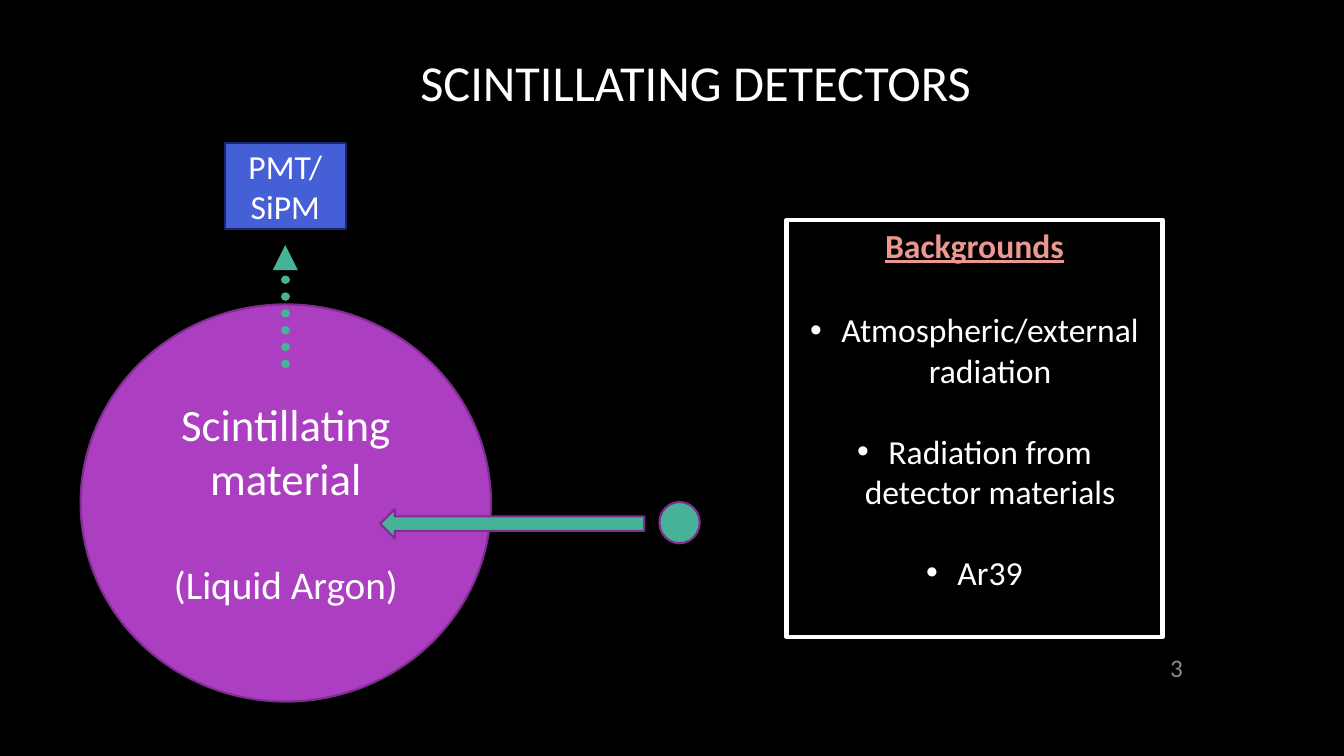
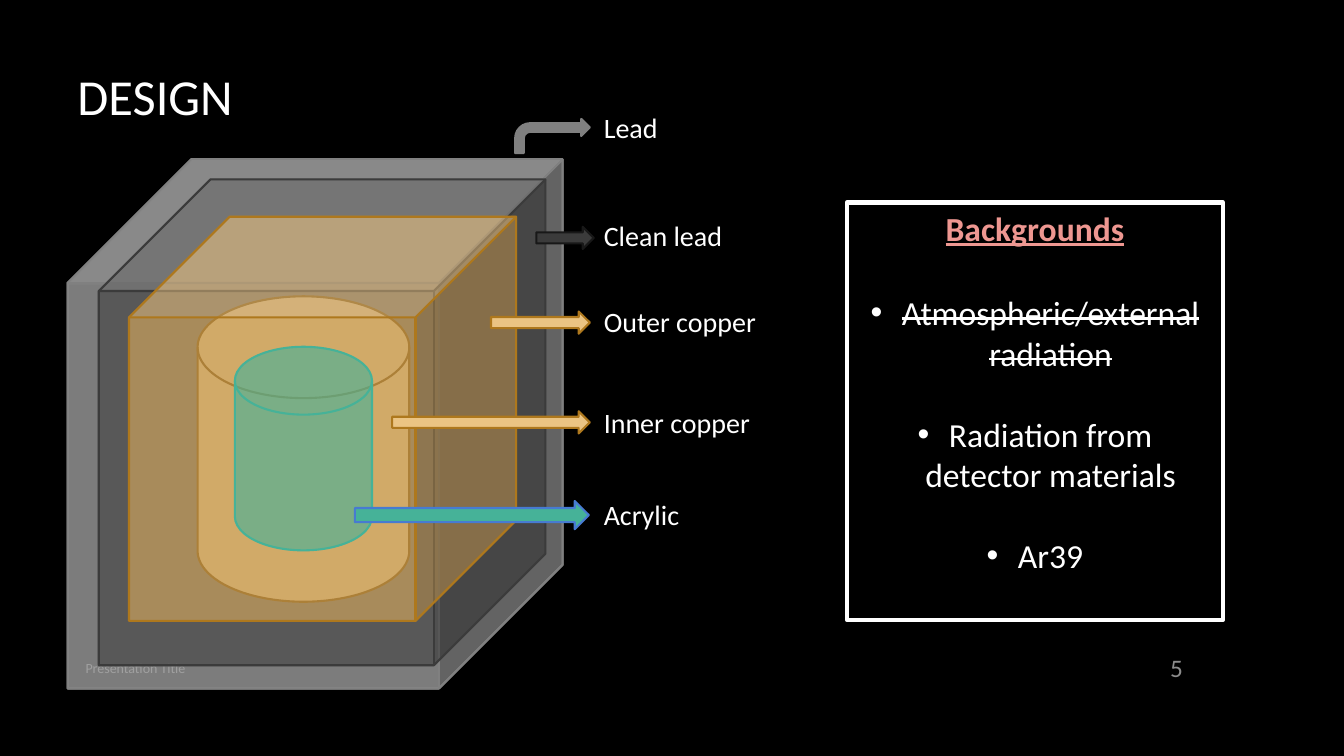
from lxml import etree
from pptx import Presentation
from pptx.dml.color import RGBColor
from pptx.enum.dml import MSO_LINE
from pptx.enum.shapes import MSO_CONNECTOR, MSO_SHAPE
from pptx.enum.text import MSO_ANCHOR, PP_ALIGN
from pptx.oxml.ns import qn
from pptx.util import Inches, Pt

RECT, CUBE = MSO_SHAPE.RECTANGLE, MSO_SHAPE.CUBE
DISC, DRUM = MSO_SHAPE.FLOWCHART_CONNECTOR, MSO_SHAPE.FLOWCHART_MAGNETIC_DISK
RIGHT, LEFT, BENT = MSO_SHAPE.RIGHT_ARROW, MSO_SHAPE.LEFT_ARROW, MSO_SHAPE.BENT_ARROW
TOP, MID = MSO_ANCHOR.TOP, MSO_ANCHOR.MIDDLE
START, CENTER, END = PP_ALIGN.LEFT, PP_ALIGN.CENTER, PP_ALIGN.RIGHT

BLACK = RGBColor(0x00, 0x00, 0x00)
WHITE = RGBColor(0xFF, 0xFF, 0xFF)
MUTED = RGBColor(0x8C, 0x8C, 0x8C)
PINK = RGBColor(0xEE, 0x97, 0x91)
PURPLE = RGBColor(0xAC, 0x3E, 0xC1)
PLUM = RGBColor(0x7F, 0x2E, 0x8F)
BLUE = RGBColor(0x45, 0x5F, 0xD6)
NAVY = RGBColor(0x18, 0x27, 0x6C)
SKY = RGBColor(0x47, 0x7B, 0xD1)
TEAL = RGBColor(0x46, 0xB2, 0x98)
SILVER = RGBColor(0xA6, 0xA6, 0xA6)
GRAY = RGBColor(0x80, 0x80, 0x80)
COAL = RGBColor(0x3B, 0x3B, 0x3B)
INK = RGBColor(0x18, 0x18, 0x18)
SAND = RGBColor(0xEB, 0xC4, 0x83)
GOLD = RGBColor(0xE5, 0xB1, 0x5D)
OCHRE = RGBColor(0xAE, 0x78, 0x1D)
BROWN = RGBColor(0x74, 0x50, 0x13)

FONT = "Calibri"
TITLE = {"size": Pt(36)}
HEAD = {"size": Pt(24), "bold": True, "underline": True}
BODY = {"size": Pt(24)}
INDENT = Inches(0.31)
LABEL_X, LABEL_H = 5.89, 0.44

SOURCES = ["Atmospheric/external radiation", "Radiation from detector materials", "Ar39"]

# kind, box, fill, line
SETUP = [
    (DISC, (0.8, 3.02, 4.07, 3.94), PURPLE, PLUM),
    (DISC, (6.54, 4.98, 0.4, 0.41), TEAL, PLUM),
    (LEFT, (3.77, 5.05, 2.62, 0.29), TEAL, PLUM),
]
CAPTIONS = [
    ("Scintillating material", (1.59, 3.89, 2.49, 1.18), 32),
    ("(Liquid Argon)", (1.59, 5.51, 2.49, 0.57), 28),
]

# kind, box, fill, line, opacity in percent, depth of a cube
LAYERS = [
    (CUBE, (0.67, 1.58, 4.91, 5.25), SILVER, GRAY, 50, 0.25),
    (CUBE, (0.98, 1.78, 4.43, 4.82), COAL, COAL, 50, 0.25),
    (DRUM, (1.96, 2.94, 2.1, 3.03), SAND, BROWN, 61, None),
    (CUBE, (1.28, 2.15, 3.84, 4.01), GOLD, OCHRE, 50, 0.26),
    (DRUM, (2.33, 3.44, 1.36, 2.02), TEAL, TEAL, 61, None),
]
PASSES = 2  # the layers are stacked twice for deeper colour

# label, its top, arrow kind, arrow box, fill, line
PARTS = [
    ("Lead", 1.05, BENT, (5.11, 1.18, 0.74, 0.34), GRAY, GRAY),
    ("Clean lead", 2.12, RIGHT, (5.32, 2.25, 0.57, 0.22), COAL, INK),
    ("Outer copper", 2.97, RIGHT, (4.87, 3.09, 0.98, 0.22), SAND, OCHRE),
    ("Inner copper", 3.97, RIGHT, (3.89, 4.08, 1.96, 0.22), SAND, OCHRE),
    ("Acrylic", 4.89, RIGHT, (3.52, 4.97, 2.32, 0.28), TEAL, SKY),
]


def style(font, look, color):
    for key, value in {"name": FONT, **look}.items():
        setattr(font, key, value)
    font.color.rgb = color


def write(shape, lines, look, color=WHITE, align=START, anchor=TOP):
    frame = shape.text_frame
    frame.word_wrap = True
    frame.vertical_anchor = anchor
    for i, line in enumerate(lines):
        para = frame.paragraphs[0] if i == 0 else frame.add_paragraph()
        para.alignment = align
        run = para.add_run()
        run.text = line
        style(run.font, look, color)
    return frame


def add_text(slide, box, lines, look, *args, **opts):
    shape = slide.shapes.add_textbox(*map(Inches, box))
    return write(shape, lines, look, *args, **opts)


def add_form(slide, kind, box, fill, line, alpha=100, depth=None, width=1.5):
    shape = slide.shapes.add_shape(kind, *map(Inches, box))
    shape.shadow.inherit = False
    if fill is None:
        shape.fill.background()
    else:
        shape.fill.solid()
        shape.fill.fore_color.rgb = fill
    if alpha < 100:
        tint = shape.fill._xPr.find(".//" + qn("a:srgbClr"))
        etree.SubElement(tint, qn("a:alpha"), val=str(alpha * 1000))
    if depth is not None:
        shape.adjustments[0] = depth
    shape.line.color.rgb = line
    shape.line.width = Pt(width)
    return shape


def add_panel(slide, left, top, struck=()):
    """Framed list of backgrounds; the indexes in struck are crossed out."""
    frame = add_form(slide, RECT, (left, top, 3.73, 4.14), None, WHITE, width=3)
    write(frame, ["Backgrounds"], HEAD, PINK, CENTER)
    body = add_text(slide, (left, top + 0.84, 3.73, 2.93), SOURCES, BODY, align=CENTER)
    for i, para in enumerate(body.paragraphs):
        if i:
            para.space_before = Pt(29)
        props = para._p.get_or_add_pPr()
        props.set("marL", str(INDENT))
        props.set("indent", str(-INDENT))
        etree.SubElement(props, qn("a:buFont"), typeface="Arial")
        etree.SubElement(props, qn("a:buChar"), char="•")
        if i in struck:
            para.runs[0]._r.get_or_add_rPr().set("strike", "sngStrike")


def add_ray(slide, start, end):
    """Dotted light ray with an arrowhead."""
    ray = slide.shapes.add_connector(MSO_CONNECTOR.STRAIGHT, *map(Inches, start + end))
    ray.line.color.rgb = TEAL
    ray.line.width = Pt(6)
    ray.line.dash_style = MSO_LINE.ROUND_DOT
    stroke = ray.line._get_or_add_ln()
    stroke.set("cap", "rnd")
    etree.SubElement(stroke, qn("a:tailEnd"), type="triangle")
    etree.SubElement(ray._element.spPr, qn("a:effectLst"))


def new_slide(deck, number):
    slide = deck.slides.add_slide(deck.slide_layouts[6])
    add_text(slide, (11.23, 6.42, 0.6, 0.41), [str(number)], {"size": Pt(18)},
             MUTED, END, MID)
    return slide


def add_setup(deck):
    slide = new_slide(deck, 3)
    for form in SETUP:
        add_form(slide, *form)
    sensor = add_form(slide, RECT, (2.23, 1.42, 1.2, 0.85), BLUE, NAVY)
    write(sensor, ["PMT/", "SiPM"], BODY, align=CENTER, anchor=MID)
    add_ray(slide, (2.83, 3.61), (2.83, 2.43))
    for text, box, size in CAPTIONS:
        add_text(slide, box, [text], {"size": Pt(size)}, align=CENTER)
    add_text(slide, (4.07, 0.46, 5.76, 0.71), ["SCINTILLATING DETECTORS"], TITLE)
    add_panel(slide, 7.8, 2.18)


def add_design(deck):
    slide = new_slide(deck, 5)
    add_text(slide, (0.67, 0.15, 11.08, 1.59), ["DESIGN"], TITLE, anchor=MID)
    add_text(slide, (0.75, 6.42, 8.56, 0.41), ["Presentation Title"],
             {"size": Pt(10)}, MUTED, anchor=MID)
    add_panel(slide, 8.4, 2.01, struck=(0,))
    for layer in LAYERS * PASSES:
        add_form(slide, *layer)
    for label, top, *arrow in PARTS:
        add_form(slide, *arrow)
        add_text(slide, (LABEL_X, top, 1.84, LABEL_H), [label], {"size": Pt(20)})


def main():
    deck = Presentation()
    deck.slide_width, deck.slide_height = Inches(13.33), Inches(7.5)
    back = deck.slide_master.background.fill
    back.solid()
    back.fore_color.rgb = BLACK
    add_setup(deck)
    add_design(deck)
    deck.save("out.pptx")


if __name__ == "__main__":
    main()
